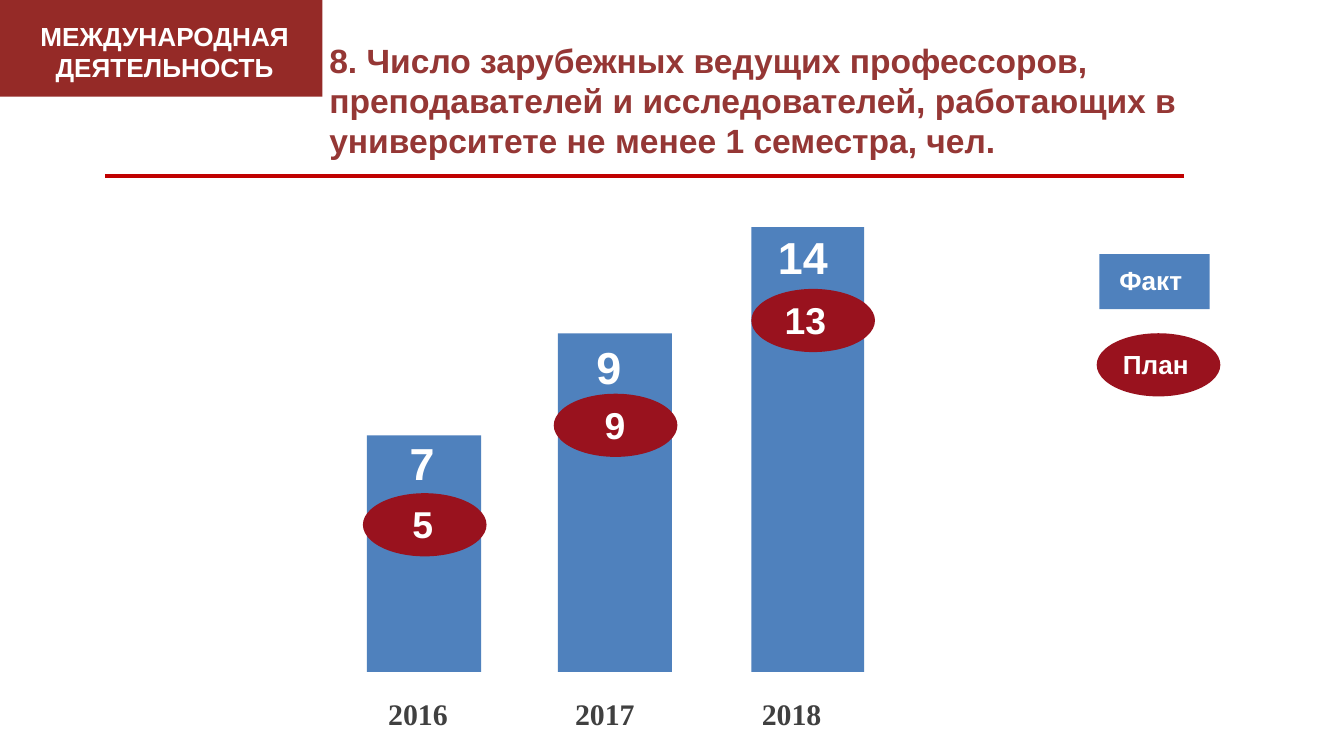
"""Build a slide comparing planned and actual numbers of foreign professors."""
from lxml import etree
from pptx import Presentation
from pptx.dml.color import RGBColor
from pptx.enum.shapes import MSO_CONNECTOR as Link, MSO_SHAPE as Kind
from pptx.enum.text import MSO_ANCHOR as Anchor, MSO_AUTO_SIZE as Fit, PP_ALIGN as Align
from pptx.oxml.ns import qn
from pptx.util import Inches, Pt

TITLE = ("8. Число зарубежных ведущих профессоров, преподавателей и "
         "исследователей, работающих в университете не менее 1 семестра, чел.")
TOPIC = "МЕЖДУНАРОДНАЯ ДЕЯТЕЛЬНОСТЬ"
BLUE, RED, WHITE = "4F81BD", "99121E", "FFFFFF"
WIDTH = 10
HEIGHT = WIDTH * 9 / 16
OVAL = (0.92, 0.47)
BASE = 5
YEARS = ["2016", "2017", "2018"]
YEAR_STEP = 1.39
BARS = [
    {"bar": (2.73, 3.24, 0.85), "fact": ("7", 2.95, 3.19, 0.58),
     "oval": (2.7, 3.67), "plan": ("5", 2.97, 0.35)},
    {"bar": (4.15, 2.48, 0.85), "fact": ("9", 4.34, 2.48, 0.47),
     "oval": (4.12, 2.93), "plan": ("9", 4.4, 0.39)},
    {"bar": (5.59, 1.69, 0.84), "fact": ("14", 5.69, 1.66, 0.91),
     "oval": (5.59, 2.15), "plan": ("13", 5.74, 0.79)},
]


def color(code):
    return RGBColor.from_string(code)


def style(font, size, code=WHITE, name="Arial"):
    look = {"size": Pt(size), "name": name, "bold": True}
    for key, value in look.items():
        setattr(font, key, value)
    font.color.rgb = color(code)


def block(slide, kind, box, code):
    shape = slide.shapes.add_shape(kind, *map(Inches, box))
    shape.shadow.inherit = False
    shape.fill.solid()
    shape.fill.fore_color.rgb = color(code)
    shape.line.fill.background()


def label(slide, text, box, size, align=Align.LEFT):
    frame = slide.shapes.add_textbox(*map(Inches, box)).text_frame
    frame.word_wrap = True
    frame.auto_size = Fit.SHAPE_TO_FIT_TEXT
    para = frame.paragraphs[0]
    para.text = text
    para.alignment = align
    style(para.runs[0].font, size)
    return para


def head(slide):
    title = slide.shapes.title
    place = {"left": 2.45, "top": 0.3, "width": 7.14, "height": 0.97}
    for key, value in place.items():
        setattr(title, key, Inches(value))
    frame = title.text_frame
    look = {"margin_left": 0, "margin_top": 0, "margin_right": 0, "margin_bottom": 0,
            "word_wrap": True, "auto_size": Fit.NONE, "vertical_anchor": Anchor.TOP}
    for key, value in look.items():
        setattr(frame, key, value)
    para = frame.paragraphs[0]
    para.text = TITLE
    para.alignment = Align.LEFT
    para.line_spacing = Pt(21.4)
    style(para.runs[0].font, 18, "953735")

    rule = slide.shapes.add_connector(Link.STRAIGHT, *map(Inches, (8.81, 1.31, 0.78, 1.31)))
    rule.line.color.rgb = color("C00000")
    rule.line.width = Pt(2)
    etree.SubElement(rule._element.spPr, qn("a:effectLst"))
    block(slide, Kind.RECTANGLE, (0, 0, 2.4, 0.72), "952A27")
    label(slide, TOPIC, (0.05, 0.1, 2.35, 0.57), 14, Align.CENTER)


def bars(slide):
    for item in BARS:
        left, top, width = item["bar"]
        block(slide, Kind.RECTANGLE, (left, top, width, BASE - top), BLUE)
        text, *box = item["fact"]
        label(slide, text, (*box, 0.5), 24)
        left, top = item["oval"]
        block(slide, Kind.OVAL, (left, top, *OVAL), RED)
        text, left, width = item["plan"]
        label(slide, text, (left, top + 0.01, width, 0.44), 20)


def years(slide):
    para = label(slide, "\t".join(YEARS), (2.79, 5.13, 4.6, 0.37), 16)
    tabs = etree.SubElement(para._p.get_or_add_pPr(), qn("a:tabLst"))
    for step in range(1, len(YEARS)):
        etree.SubElement(tabs, qn("a:tab"), pos=str(Inches(step * YEAR_STEP)), algn="l")
    style(para.runs[0].font, 16, "404040", "Times New Roman")


def legend(slide):
    block(slide, Kind.RECTANGLE, (8.18, 1.89, 0.82, 0.41), BLUE)
    label(slide, "Факт", (8.23, 1.92, 0.73, 0.34), 14)
    block(slide, Kind.OVAL, (8.16, 2.48, *OVAL), RED)
    label(slide, "План", (8.11, 2.54, 0.98, 0.34), 14, Align.CENTER)


def main():
    deck = Presentation()
    deck.slide_width, deck.slide_height = Inches(WIDTH), Inches(HEIGHT)
    slide = deck.slides.add_slide(deck.slide_layouts[5])
    for draw in (head, bars, years, legend):
        draw(slide)
    deck.save("out.pptx")


if __name__ == "__main__":
    main()
